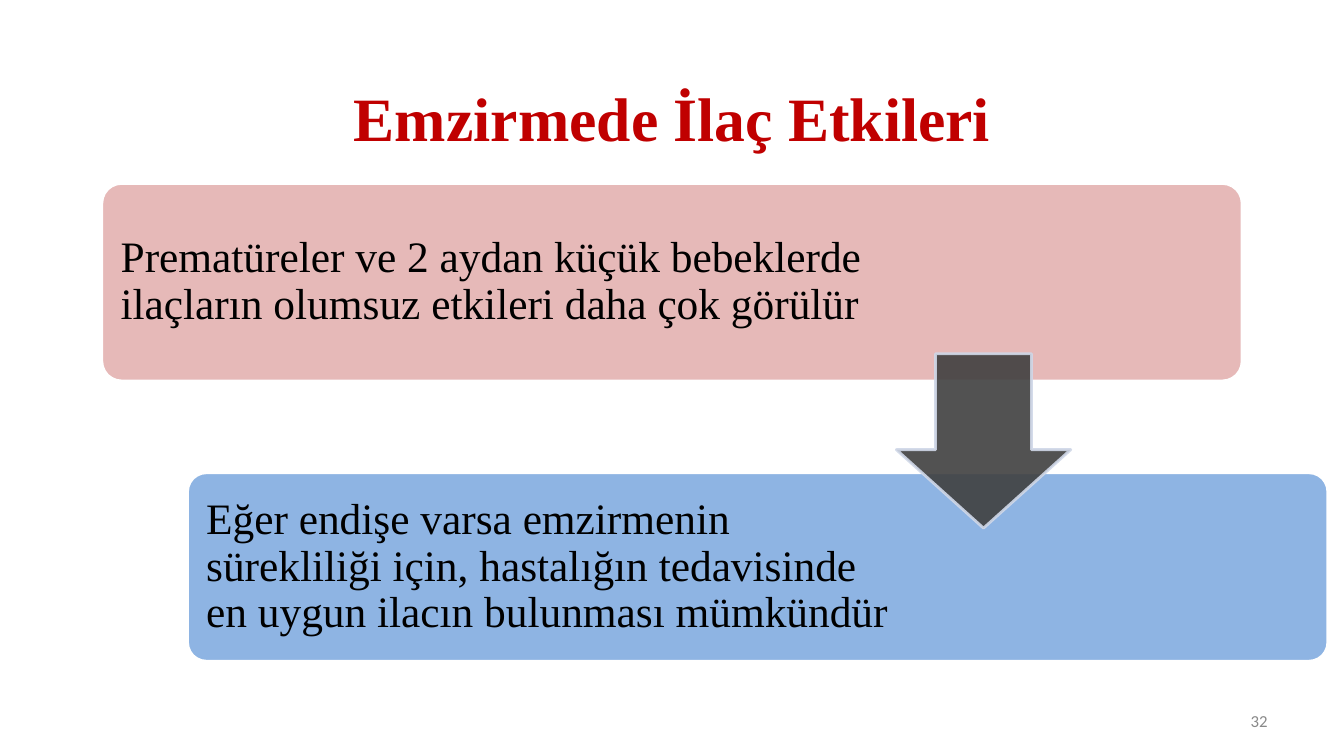
from lxml import etree
from pptx import Presentation
from pptx.dml.color import RGBColor
from pptx.enum import shapes, text
from pptx.oxml.ns import qn
from pptx.util import Inches, Pt

RED = RGBColor(0xC0, 0x00, 0x00)
PINK = RGBColor(0xE6, 0xB9, 0xB8)
BLUE = RGBColor(0x8E, 0xB4, 0xE3)
DARK = RGBColor(0x40, 0x40, 0x40)
PALE = RGBColor(0xD0, 0xD8, 0xE8)
GREY = RGBColor(0x89, 0x89, 0x89)
WHITE = RGBColor(0xFF, 0xFF, 0xFF)
BLACK = RGBColor(0x00, 0x00, 0x00)
SERIF = "Times New Roman"
PAD = 0.13


def add_text(tf, words, size, font, color, align, bold=False):
    tf.word_wrap = True
    tf.vertical_anchor = text.MSO_ANCHOR.MIDDLE
    p = tf.paragraphs[0]
    p.alignment = align
    r = p.add_run()
    r.text = words
    r.font.size, r.font.name, r.font.bold = Pt(size), font, bold
    r.font.color.rgb = color
    return p


def add_title(s, box, words):
    sp = s.shapes.title
    sp.left, sp.top, sp.width, sp.height = map(Inches, box)
    add_text(sp.text_frame, words, 44, SERIF, RED, text.PP_ALIGN.CENTER, True)


def add_filled(s, kind, box, adjustments, fill, line):
    sp = s.shapes.add_shape(kind, *map(Inches, box))
    for i, value in enumerate(adjustments):
        sp.adjustments[i] = value
    sp.shadow.inherit = False
    sp.fill.solid()
    sp.fill.fore_color.rgb = fill
    sp.line.color.rgb = line
    sp.line.width = Pt(2)
    return sp


def add_step(s, box, fill, words, right_pad):
    """Rounded panel whose text stops right_pad inches before its right edge."""
    sp = add_filled(s, shapes.MSO_SHAPE.ROUNDED_RECTANGLE, box, [0.1], fill, WHITE)
    tf = sp.text_frame
    tf.margin_left = tf.margin_top = tf.margin_bottom = Inches(PAD)
    tf.margin_right = Inches(right_pad)
    p = add_text(tf, words, 31, SERIF, BLACK, text.PP_ALIGN.LEFT)
    p.line_spacing = 0.9


def add_down_arrow(s, box):
    """Down arrow with a 90% opaque fill and outline."""
    sp = add_filled(s, shapes.MSO_SHAPE.DOWN_ARROW, box, [0.55, 0.45], DARK, PALE)
    for color in sp._element.spPr.iter(qn("a:srgbClr")):
        etree.SubElement(color, qn("a:alpha")).set("val", "90000")


def add_page_number(s, box, number):
    tf = s.shapes.add_textbox(*map(Inches, box)).text_frame
    add_text(tf, number, 12, "Calibri", GREY, text.PP_ALIGN.RIGHT)


def main():
    prs = Presentation()
    prs.slide_width, prs.slide_height = Inches(13.33), Inches(7.5)
    s = prs.slides.add_slide(prs.slide_layouts[5])
    add_title(s, (0.67, 0.62, 12, 1.08), "Emzirmede İlaç Etkileri")
    add_page_number(s, (9.56, 6.95, 3.11, 0.4), "32")
    add_step(s, (1.01, 1.82, 11.31, 1.96), PINK,
             "Prematüreler ve 2 aydan küçük bebeklerde ilaçların olumsuz "
             "etkileri daha çok görülür", 3.18)
    add_step(s, (1.86, 4.69, 11.31, 1.87), BLUE,
             "Eğer endişe varsa emzirmenin sürekliliği için, hastalığın "
             "tedavisinde en uygun ilacın bulunması mümkündür", 4.16)
    add_down_arrow(s, (8.89, 3.51, 1.73, 1.73))
    prs.save("out.pptx")


if __name__ == "__main__":
    main()
